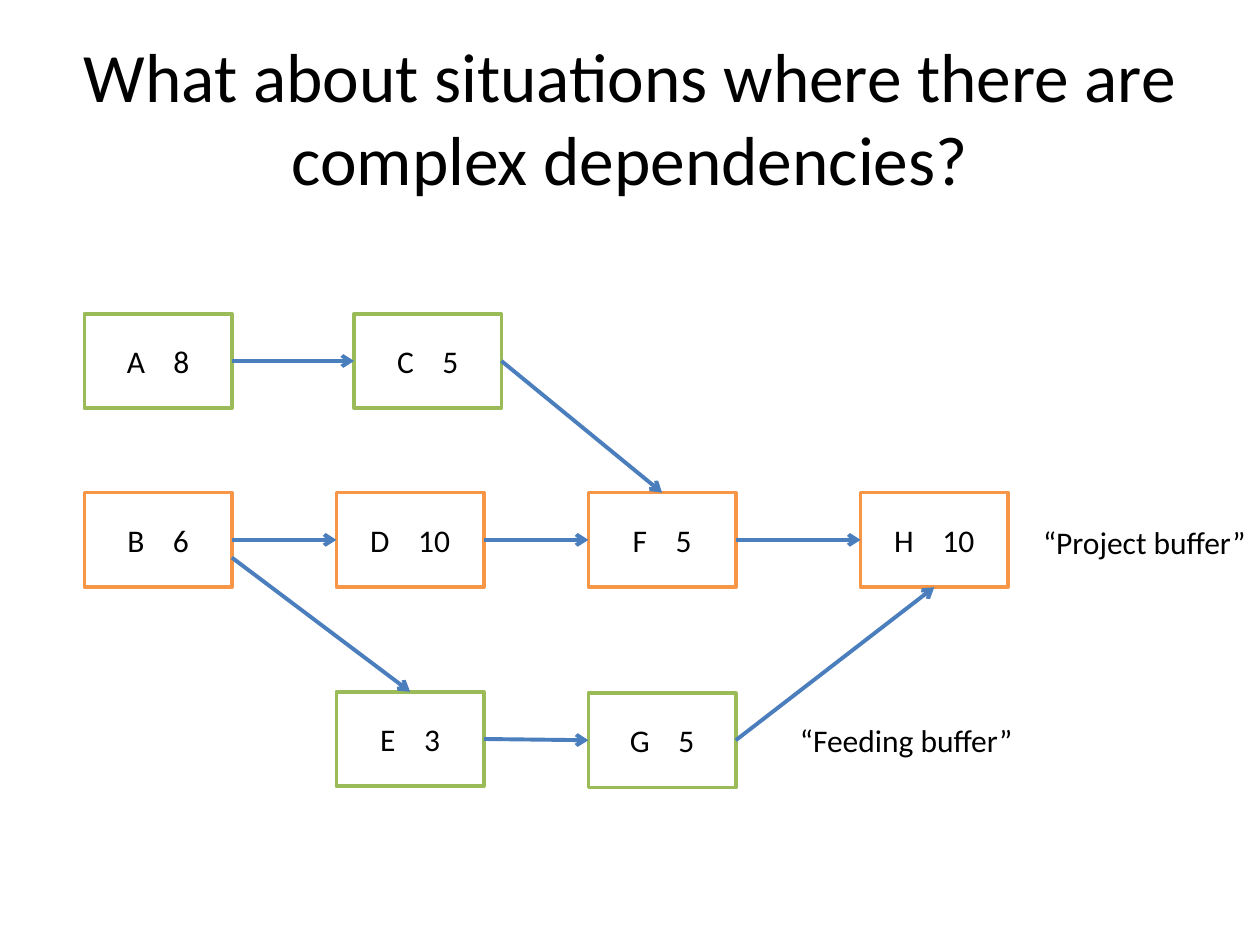
from lxml.etree import SubElement
from pptx import Presentation
from pptx.dml.color import RGBColor
from pptx.enum.shapes import MSO_CONNECTOR, MSO_SHAPE
from pptx.enum.text import MSO_ANCHOR, MSO_AUTO_SIZE, PP_ALIGN
from pptx.oxml.ns import qn
from pptx.util import Inches, Pt

COLORS = {"text": "000000", "fill": "FFFFFF", "critical": "F79646",
          "feeding": "9BBB59", "arrow": "4B7EBC"}
FONT = "Calibri"
TASK_WIDTH, TASK_HEIGHT = 1.17, 0.75
TOP, LEFT, BOTTOM, RIGHT = range(4)
TASKS = [
    ("A", 8, 0.67, 2.49, "feeding"),
    ("B", 6, 0.67, 3.91, "critical"),
    ("C", 5, 2.81, 2.49, "feeding"),
    ("D", 10, 2.67, 3.91, "critical"),
    ("E", 3, 2.67, 5.49, "feeding"),
    ("F", 5, 4.67, 3.91, "critical"),
    ("G", 5, 4.67, 5.5, "feeding"),
    ("H", 10, 6.83, 3.91, "critical"),
]
DEPENDENCIES = [
    ("A", "C", LEFT, 0), ("C", "F", TOP, 0), ("B", "D", LEFT, 0),
    ("D", "F", LEFT, 0), ("F", "H", LEFT, 0), ("B", "E", TOP, 0.14),
    ("E", "G", LEFT, 0), ("G", "H", BOTTOM, 0),
]
BUFFERS = [
    ("“Project buffer”", (8.18, 4.1, 1.82, 0.4)),
    ("“Feeding buffer”", (6.25, 5.67, 1.91, 0.4)),
]


def color(name):
    """Return the named colour."""
    return RGBColor.from_string(COLORS[name])


def style(para, size, align):
    """Set the font and alignment of a paragraph."""
    para.alignment = align
    para.font.name = FONT
    para.font.size = Pt(size)
    para.font.color.rgb = color("text")


def add_text(page, text, box, size, align, wrap):
    """Add a text box with one paragraph in the given box."""
    shape = page.shapes.add_textbox(*map(Inches, box))
    frame = shape.text_frame
    frame.word_wrap = wrap
    frame.text = text
    style(frame.paragraphs[0], size, align)
    return frame


def add_title(page, box):
    """Add the vertically centred slide title."""
    frame = add_text(page, "What about situations where there are complex dependencies?",
                     box, 39.6, PP_ALIGN.CENTER, True)
    frame.vertical_anchor = MSO_ANCHOR.MIDDLE


def add_task(page, name, duration, box, kind):
    """Add an outlined task with its name and duration set apart."""
    task = page.shapes.add_shape(MSO_SHAPE.RECTANGLE, *map(Inches, box))
    task.shadow.inherit = False
    task.fill.solid()
    task.fill.fore_color.rgb = color("fill")
    task.line.color.rgb = color(kind)
    task.line.width = Pt(2)
    task.text_frame.vertical_anchor = MSO_ANCHOR.MIDDLE
    para = task.text_frame.paragraphs[0]
    style(para, 18, PP_ALIGN.CENTER)
    for text in (name, " ", str(duration)):
        span = para.add_run()
        span.text = text
        if text == " ":
            span.font._element.set("spc", "1220")
    return task


def add_dependency(page, source, target, side, drop):
    """Add an arrow from the right of one task to a side of another."""
    start_x = source.left + source.width
    start_y = source.top + source.height // 2 + Inches(drop)
    arrow = page.shapes.add_connector(MSO_CONNECTOR.STRAIGHT, start_x, start_y,
                                      target.left, target.top)
    if not drop:
        arrow.begin_connect(source, RIGHT)
    arrow.end_connect(target, side)
    arrow.line.color.rgb = color("arrow")
    arrow.line.width = Pt(2.25)
    SubElement(arrow.line._get_or_add_ln(), qn("a:tailEnd"), type="arrow")
    SubElement(arrow._element.spPr, qn("a:effectLst"))


def add_network(page):
    """Add the tasks, their dependencies and the buffer labels."""
    tasks = {
        name: add_task(page, name, duration, (left, top, TASK_WIDTH, TASK_HEIGHT), kind)
        for name, duration, left, top, kind in TASKS
    }
    for source, target, side, drop in DEPENDENCIES:
        add_dependency(page, tasks[source], tasks[target], side, drop)
    for text, box in BUFFERS:
        frame = add_text(page, text, box, 18, PP_ALIGN.LEFT, False)
        frame.auto_size = MSO_AUTO_SIZE.SHAPE_TO_FIT_TEXT


def main():
    """Build and save the deck."""
    deck = Presentation()
    deck.slide_width, deck.slide_height = Inches(10), Inches(7.5)
    page = deck.slides.add_slide(deck.slide_layouts[6])
    add_title(page, (0.5, 0.3, 9, 1.25))
    add_network(page)
    deck.save("out.pptx")


if __name__ == "__main__":
    main()
